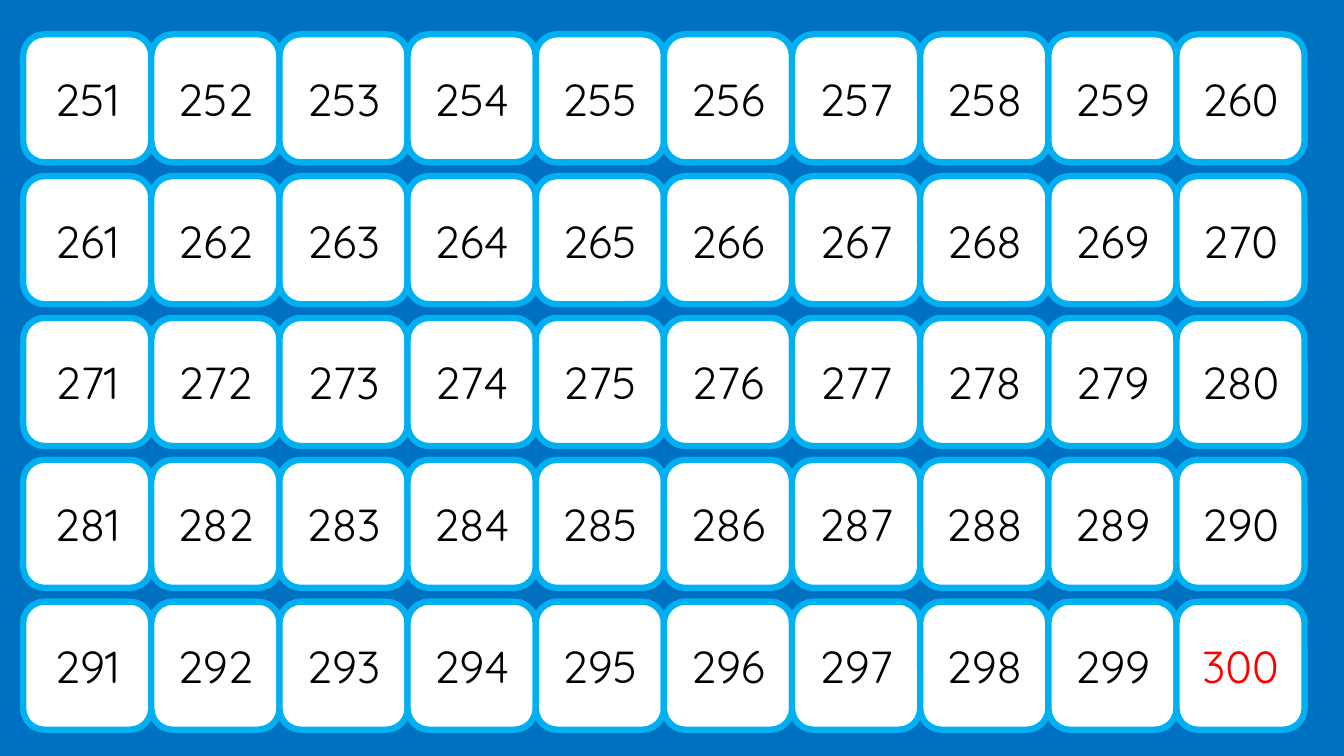
import pptx
import pptx.dml.color
import pptx.enum.shapes
import pptx.enum.text
import pptx.util

BACKGROUND = pptx.dml.color.RGBColor(0x00, 0x70, 0xC0)
BORDER = pptx.dml.color.RGBColor(0x00, 0xB0, 0xF0)
WHITE = pptx.dml.color.RGBColor(0xFF, 0xFF, 0xFF)
BLACK = pptx.dml.color.RGBColor(0x00, 0x00, 0x00)
RED = pptx.dml.color.RGBColor(0xFF, 0x00, 0x00)

FONT = "Quicksand"
COLUMNS, ROWS = 10, 5
FIRST_NUMBER = 251
LAST_NUMBER = FIRST_NUMBER + COLUMNS * ROWS - 1


def add_number_tile(page, left, top, side, number):
    tile = page.shapes.add_shape(
        pptx.enum.shapes.MSO_SHAPE.ROUNDED_RECTANGLE,
        round(left), round(top), round(side), round(side))
    tile.shadow.inherit = False
    tile.fill.solid()
    tile.fill.fore_color.rgb = WHITE
    tile.line.color.rgb = BORDER
    tile.line.width = pptx.util.Pt(4.5)

    frame = tile.text_frame
    frame.text = str(number)
    frame.vertical_anchor = pptx.enum.text.MSO_ANCHOR.MIDDLE
    para = frame.paragraphs[0]
    para.alignment = pptx.enum.text.PP_ALIGN.CENTER
    font = para.runs[0].font
    font.name = FONT
    font.size = pptx.util.Pt(32)
    font.color.rgb = RED if number == LAST_NUMBER else BLACK


def add_number_grid(page, left, top, width, height):
    side = width / COLUMNS
    row_step = (height - side) / (ROWS - 1)
    for index in range(COLUMNS * ROWS):
        row, column = divmod(index, COLUMNS)
        add_number_tile(page, left + column * side, top + row * row_step,
                        side, FIRST_NUMBER + index)


def main():
    deck = pptx.Presentation()
    deck.slide_width = pptx.util.Inches(13.33)
    deck.slide_height = pptx.util.Inches(7.5)
    page = deck.slides.add_slide(deck.slide_layouts[6])
    page.background.fill.solid()
    page.background.fill.fore_color.rgb = BACKGROUND
    add_number_grid(page, pptx.util.Inches(0.23), pptx.util.Inches(0.34),
                    pptx.util.Inches(12.71), pptx.util.Inches(6.9))
    deck.save("out.pptx")


if __name__ == "__main__":
    main()
